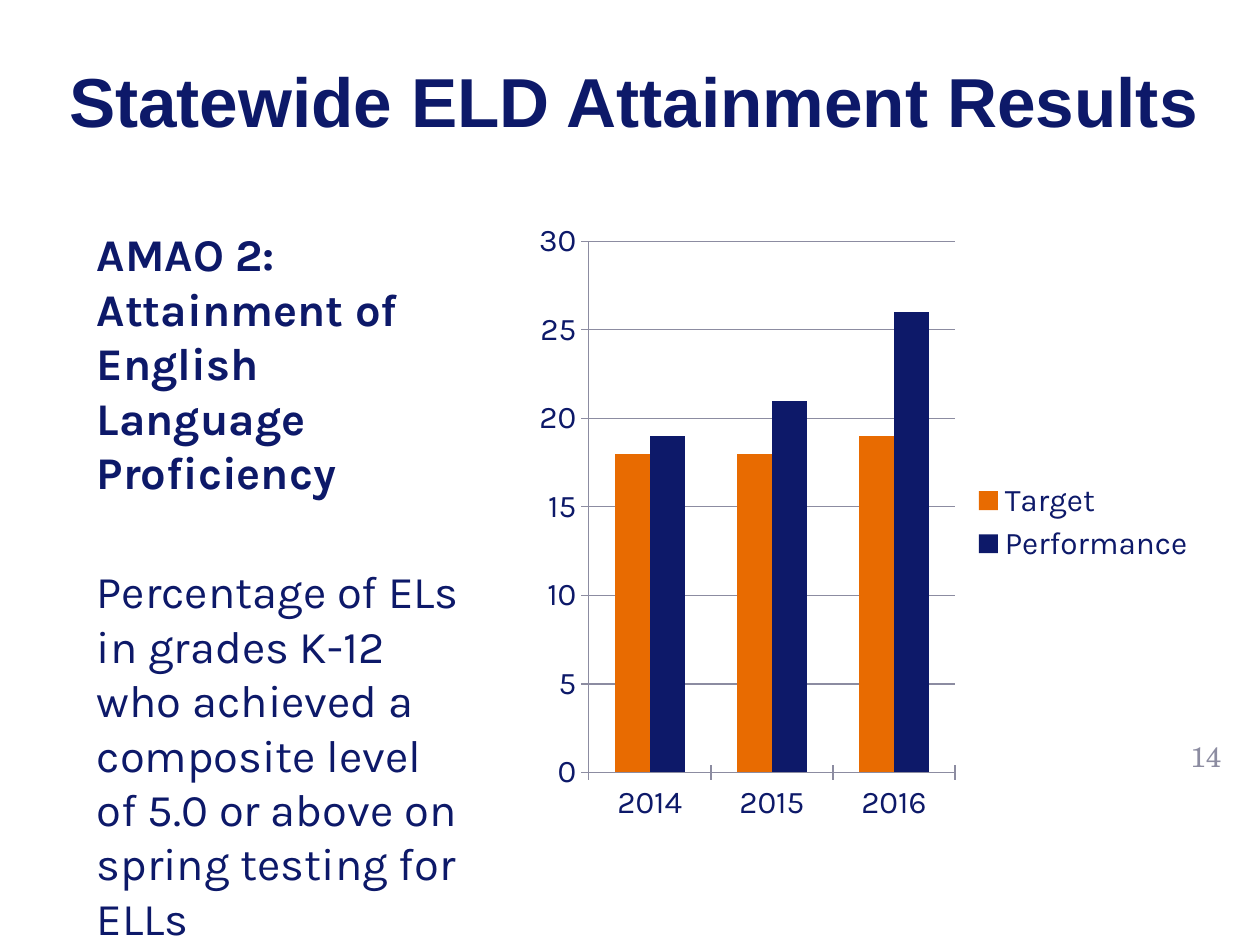
from pptx import Presentation
from pptx.chart.data import CategoryChartData
from pptx.dml.color import RGBColor
from pptx.enum.chart import XL_CHART_TYPE, XL_LEGEND_POSITION, XL_TICK_MARK
from pptx.enum.text import MSO_ANCHOR, MSO_AUTO_SIZE, PP_ALIGN
from pptx.util import Emu, Pt

COLUMNS = XL_CHART_TYPE.COLUMN_CLUSTERED
RIGHT = XL_LEGEND_POSITION.RIGHT
CROSS = XL_TICK_MARK.CROSS
TOP, MIDDLE = MSO_ANCHOR.TOP, MSO_ANCHOR.MIDDLE
NO_FIT = MSO_AUTO_SIZE.NONE
LEFT, CENTER = PP_ALIGN.LEFT, PP_ALIGN.CENTER

EMU_PER_PX = 9144
COLORS = {"navy": "0D1969", "orange": "E86B01", "gray": "8C8CA1"}


def px(n):
    return Emu(n * EMU_PER_PX)


def rgb(name):
    return RGBColor.from_string(COLORS[name])


class Deck:
    def __init__(self, width, height):
        self.prs = Presentation()
        self.prs.slide_width, self.prs.slide_height = px(width), px(height)
        self.s = None

    def add_slide(self):
        self.s = self.prs.slides.add_slide(self.prs.slide_layouts[5])

    def style(self, font, color="navy", **values):
        for name, value in values.items():
            setattr(font, name, value)
        font.color.rgb = rgb(color)

    def fill_text(self, sp, paragraphs, anchor, align, gap=0):
        tf = sp.text_frame
        for name, value in {"word_wrap": True, "auto_size": NO_FIT,
                            "vertical_anchor": anchor}.items():
            setattr(tf, name, value)
        for i, (text, fmt) in enumerate(paragraphs):
            p = tf.add_paragraph() if i else tf.paragraphs[0]
            p.alignment = align
            p.space_before = Pt(gap if i else 0)
            r = p.add_run()
            r.text = text
            self.style(r.font, **fmt)

    def title(self, box, text, fmt):
        sp = self.s.shapes.title
        for name, n in zip(("left", "top", "width", "height"), box):
            setattr(sp, name, px(n))
        self.fill_text(sp, [(text, fmt)], MIDDLE, CENTER)

    def text(self, box, paragraphs, anchor=TOP, align=LEFT, gap=0):
        sp = self.s.shapes.add_textbox(*map(px, box))
        self.fill_text(sp, paragraphs, anchor, align, gap)

    def column_chart(self, box, categories, series, fmt):
        data = CategoryChartData()
        data.categories = categories
        for name, values, _ in series:
            data.add_series(name, values)
        chart = self.s.shapes.add_chart(COLUMNS, *map(px, box), data).chart
        self.style(chart.font, **fmt)
        chart.has_title = False
        chart.has_legend = True
        chart.legend.position = RIGHT
        chart.legend.include_in_layout = False
        plot = chart.plots[0]
        plot.vary_by_categories = False
        plot.gap_width, plot.overlap = 150, 0
        for item, (_, _, color) in zip(plot.series, series):
            item.format.fill.solid()
            item.format.fill.fore_color.rgb = rgb(color)
        axis = chart.value_axis
        for name, value in {"minimum_scale": 0, "maximum_scale": 30,
                            "major_unit": 5, "has_major_gridlines": True}.items():
            setattr(axis, name, value)
        for ax in (chart.category_axis, axis):
            ax.major_tick_mark = CROSS
        for part in (chart.category_axis, axis, axis.major_gridlines):
            part.format.line.color.rgb = rgb("gray")
            part.format.line.width = Pt(0.75)


def main():
    deck = Deck(1000, 750)
    deck.add_slide()
    deck.title((33, 17, 940, 125), "Statewide ELD Attainment Results",
               {"name": "Arial", "size": Pt(39.6), "bold": True})
    body = {"name": "Karla", "size": Pt(25.9)}
    deck.text((67, 175, 317, 487), [
        ("AMAO 2: Attainment of English Language Proficiency",
         {**body, "bold": True}),
        ("Percentage of ELs in grades K-12 who achieved a composite level "
         "of 5.0 or above on spring testing for ELLs", {**body, "bold": False}),
    ], gap=37)
    deck.column_chart((417, 167, 542, 495), ["2014", "2015", "2016"], [
        ("Target", (18, 18, 19), "orange"),
        ("Performance", (19, 21, 26), "navy"),
    ], {"name": "Karla", "size": Pt(18)})
    deck.text((928, 575, 58, 50), [
        ("14", {"name": "TeX Gyre Schola", "size": Pt(16), "color": "gray"}),
    ], MIDDLE, CENTER)
    deck.prs.save("out.pptx")


if __name__ == "__main__":
    main()
